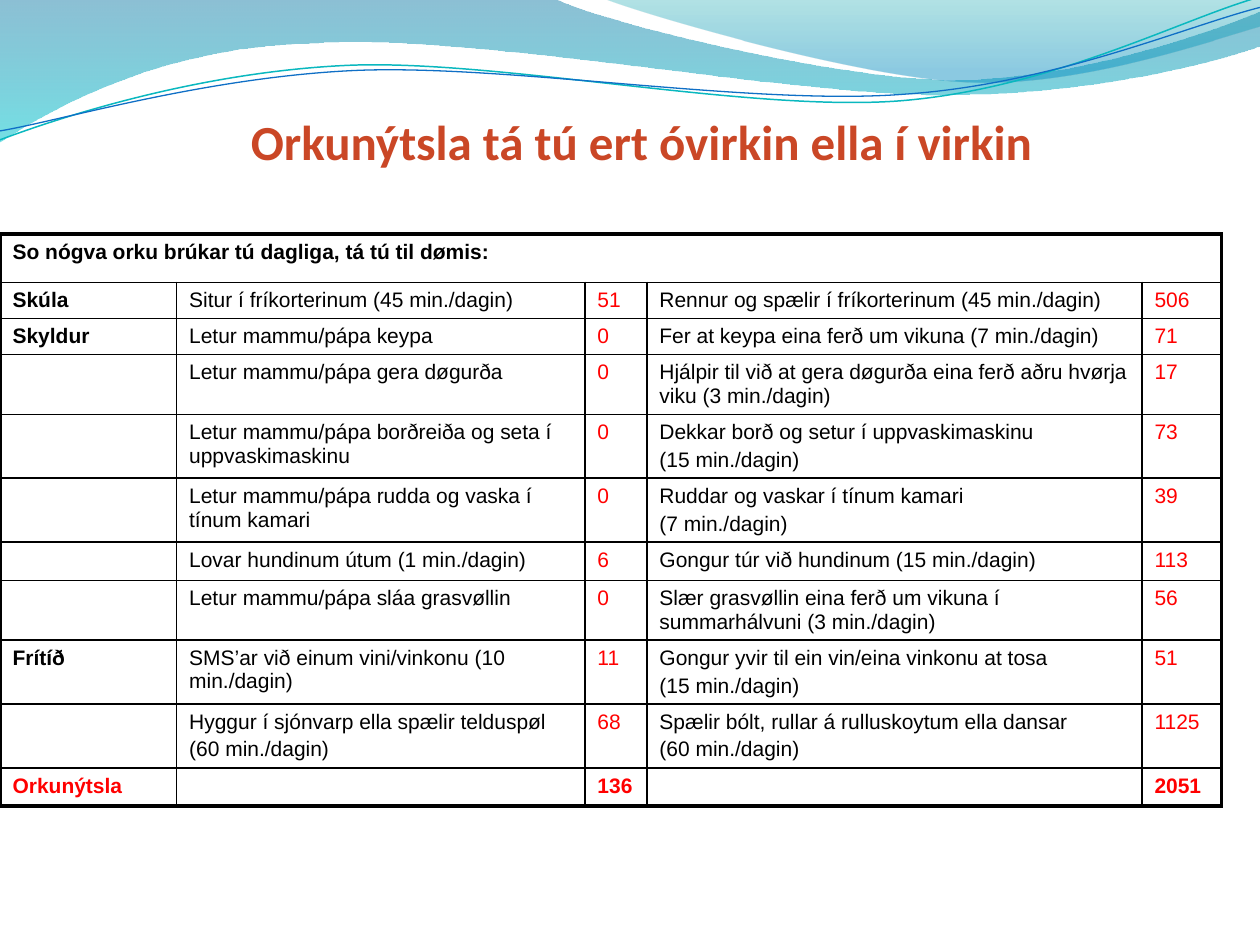
"""Build the slide comparing daily energy use when inactive and when active."""
import lxml.etree
import pptx
import pptx.dml.color
import pptx.enum.text
import pptx.oxml.ns
import pptx.util
from pptx.util import Cm

THEME = {
    "title_font": "Calibri", "table_font": "Arial",
    "title_size": 28, "table_size": 12,
    "title": "CA4726", "text": "000000", "number": "FF0000", "border": "000000",
    "inner_line": 1, "outer_line": 2.25,
}
SLIDE_SIZE = (25.4, 19.05)
TITLE = "Orkunýtsla tá tú ert óvirkin ella í virkin"
TITLE_BOX = (1.3, 1.32, 22.86, 2.26)
TABLE_TOP, TABLE_HEIGHT = 4.72, 12.04
HEADER_HEIGHT, ROW_HEIGHT = 0.97, 0.58
COLUMN_WIDTHS = (3.56, 8.23, 1.25, 9.98, 1.6)
NUMBER_COLUMNS = (2, 4)
ROWS = [
    ("So nógva orku brúkar tú dagliga, tá tú til dømis:", "", "", "", ""),
    ("Skúla", "Situr í fríkorterinum (45 min./dagin)", "51",
     "Rennur og spælir í fríkorterinum (45 min./dagin)", "506"),
    ("Skyldur", "Letur mammu/pápa keypa", "0",
     "Fer at keypa eina ferð um vikuna (7 min./dagin)", "71"),
    ("", "Letur mammu/pápa gera døgurða", "0",
     "Hjálpir til við at gera døgurða eina ferð aðru hvørja viku (3 min./dagin)", "17"),
    ("", "Letur mammu/pápa borðreiða og seta í uppvaskimaskinu", "0",
     "Dekkar borð og setur í uppvaskimaskinu\n(15 min./dagin)", "73"),
    ("", "Letur mammu/pápa rudda og vaska í tínum kamari", "0",
     "Ruddar og vaskar í tínum kamari\n(7 min./dagin)", "39"),
    ("", "Lovar hundinum útum (1 min./dagin)", "6",
     "Gongur túr við hundinum (15 min./dagin)", "113"),
    ("", "Letur mammu/pápa sláa grasvøllin", "0",
     "Slær grasvøllin eina ferð um vikuna í summarhálvuni (3 min./dagin)", "56"),
    ("Frítíð", "SMS’ar við einum vini/vinkonu (10 min./dagin)", "11",
     "Gongur yvir til ein vin/eina vinkonu at tosa\n(15 min./dagin)", "51"),
    ("", "Hyggur í sjónvarp ella spælir telduspøl\n(60 min./dagin)", "68",
     "Spælir bólt, rullar á rulluskoytum ella dansar\n(60 min./dagin)", "1125"),
    ("Orkunýtsla", "", "136", "", "2051"),
]
LINE_TILT = -2.7
WAVES = [
    {"start": (0, 0), "gradient": [(0, "0074A1", 45), (1, "00C6CF", 55)],
     "segments": [[(11.18, -0.03)],
                  [(12.09, 0.43), (16.87, 1.6), (19.25, 1.6)],
                  [(21.67, 1.6), (24.33, 0.66), (25.4, 0.23)],
                  [(25.43, 0.91)],
                  [(24.97, 1.12), (22.1, 1.93), (18.95, 1.91)],
                  [(15.8, 1.91), (9.7, 0.71), (6.53, 0.86)],
                  [(3.28, 0.91), (1.17, 2.11), (-0.03, 2.87)]]},
    {"start": (12.17, -0.03), "gradient": [(0, "00A1A9", 30), (0.8, "008BBF", 45)],
     "segments": [[(12.93, 0.28), (17.32, 1.57), (19.53, 1.65)],
                  [(21.74, 1.75), (24.41, 0.81), (25.4, 0.53)],
                  [(25.4, 0)]]},
    {"start": (-0.05, 2.22), "line": ("0AB8BF", 0.85),
     "segments": [[(1.19, 1.82), (4.02, 1.04), (7.05, 1.05)],
                  [(10.05, 1.07), (15.02, 2.37), (18.08, 2.29)],
                  [(21.13, 2.2), (23.86, 0.91), (25.41, 0.55)]]},
    {"start": (-0.04, 2.04), "line": ("0F6FC6", 0.75),
     "segments": [[(1.16, 1.9), (4.17, 1.15), (7.2, 1.16)],
                  [(10.25, 1.18), (15.13, 2.25), (18.19, 2.16)],
                  [(21.22, 2.1), (23.93, 1.06), (25.45, 0.75)]]},
]


def rgb(code):
    """Return the colour for a hex code."""
    return pptx.dml.color.RGBColor.from_string(code)


def add_xml(parent, tag, **attributes):
    """Append a DrawingML element."""
    return lxml.etree.SubElement(parent, pptx.oxml.ns.qn(tag), attributes)


def write_text(frame, text, *, font, size, color, bold=False, align=None, before=0):
    """Write one paragraph per line of text."""
    for index, line in enumerate(text.split("\n")):
        paragraph = frame.paragraphs[0] if index == 0 else frame.add_paragraph()
        paragraph.alignment = align
        paragraph.space_before = pptx.util.Pt(before)
        if not line:
            add_xml(paragraph._p, "a:endParaRPr", sz=str(size * 100))
            continue
        run = paragraph.add_run()
        run.text = line
        run.font.name = font
        run.font.size = pptx.util.Pt(size)
        run.font.bold = bold
        run.font.color.rgb = rgb(color)


def curve_segments(shape, segments):
    """Turn each three-point segment of an outline into one cubic curve."""
    vertices = iter(list(shape._element.iter(pptx.oxml.ns.qn("a:lnTo"))))
    for segment in segments:
        steps = [next(vertices) for _ in segment]
        if len(steps) == 3:
            curve = steps[0].makeelement(pptx.oxml.ns.qn("a:cubicBezTo"))
            steps[0].addprevious(curve)
            for step in steps:
                curve.append(step[0])
                step.getparent().remove(step)


def add_wave(slide, wave):
    """Draw one band or line of the header decoration."""
    points = [(Cm(x), Cm(y)) for segment in wave["segments"] for x, y in segment]
    builder = slide.shapes.build_freeform(*map(Cm, wave["start"]))
    builder.add_line_segments(points, close="gradient" in wave)
    band = builder.convert_to_shape()
    curve_segments(band, wave["segments"])
    band.shadow.inherit = False
    if "line" in wave:
        color, width = wave["line"]
        band.rotation = LINE_TILT
        band.fill.background()
        band.line.color.rgb = rgb(color)
        band.line.width = pptx.util.Pt(width)
        return
    band.line.fill.background()
    band.fill.gradient()
    band.fill.gradient_angle = 270
    for stop, (position, color, _) in zip(band.fill.gradient_stops, wave["gradient"]):
        stop.position = position
        stop.color.rgb = rgb(color)
    color_tags = band._element.spPr.iter(pptx.oxml.ns.qn("a:srgbClr"))
    for tag, (_, _, opacity) in zip(color_tags, wave["gradient"]):
        add_xml(tag, "a:alpha", val=str(opacity * 1000))


def set_borders(cell, outer_sides):
    """Draw all four borders, heavier on the table's outside."""
    properties = cell._tc.get_or_add_tcPr()
    for side in "LRTB":
        width = THEME["outer_line" if side in outer_sides else "inner_line"]
        border = add_xml(properties, f"a:ln{side}", w=str(pptx.util.Pt(width)))
        add_xml(add_xml(border, "a:solidFill"), "a:srgbClr", val=THEME["border"])


def add_energy_table(slide):
    """Add the table of activities and their energy use."""
    last_row, last_column = len(ROWS) - 1, len(COLUMN_WIDTHS) - 1
    frame = slide.shapes.add_table(len(ROWS), len(COLUMN_WIDTHS), 0, Cm(TABLE_TOP),
                                   Cm(sum(COLUMN_WIDTHS)), Cm(TABLE_HEIGHT))
    table = frame.table
    table.first_row = table.horz_banding = False
    for column, width in zip(table.columns, COLUMN_WIDTHS):
        column.width = Cm(width)
    for r, texts in enumerate(ROWS):
        table.rows[r].height = Cm(ROW_HEIGHT if r else HEADER_HEIGHT)
        for c, text in enumerate(texts):
            cell = table.cell(r, c)
            edges = {"L": c == 0, "R": c == last_column or r == 0,
                     "T": r == 0, "B": r == last_row}
            set_borders(cell, [side for side, outside in edges.items() if outside])
            cell.fill.background()
            is_number = c in NUMBER_COLUMNS or r == last_row
            write_text(cell.text_frame, text, font=THEME["table_font"],
                       size=THEME["table_size"], bold=c == 0 or r == last_row,
                       color=THEME["number" if is_number else "text"], before=2.4)
    table.cell(0, 0).merge(table.cell(0, last_column))
    frame.height = Cm(TABLE_HEIGHT)


def add_title(slide):
    """Place and format the title."""
    title = slide.shapes.title
    title.left, title.top, title.width, title.height = map(Cm, TITLE_BOX)
    frame = title.text_frame
    frame.auto_size = pptx.enum.text.MSO_AUTO_SIZE.NONE
    frame.vertical_anchor = pptx.enum.text.MSO_ANCHOR.BOTTOM
    frame.margin_left, frame.margin_right = Cm(0.4), 0
    frame.margin_bottom = Cm(0.14)
    write_text(frame, TITLE, font=THEME["title_font"], size=THEME["title_size"],
               color=THEME["title"], bold=True, align=pptx.enum.text.PP_ALIGN.CENTER)


def main():
    """Build and save the presentation."""
    deck = pptx.Presentation()
    deck.slide_width, deck.slide_height = map(Cm, SLIDE_SIZE)
    slide = deck.slides.add_slide(deck.slide_layouts[5])
    for wave in WAVES:
        add_wave(slide, wave)
    add_title(slide)
    add_energy_table(slide)
    deck.save("out.pptx")


if __name__ == "__main__":
    main()
